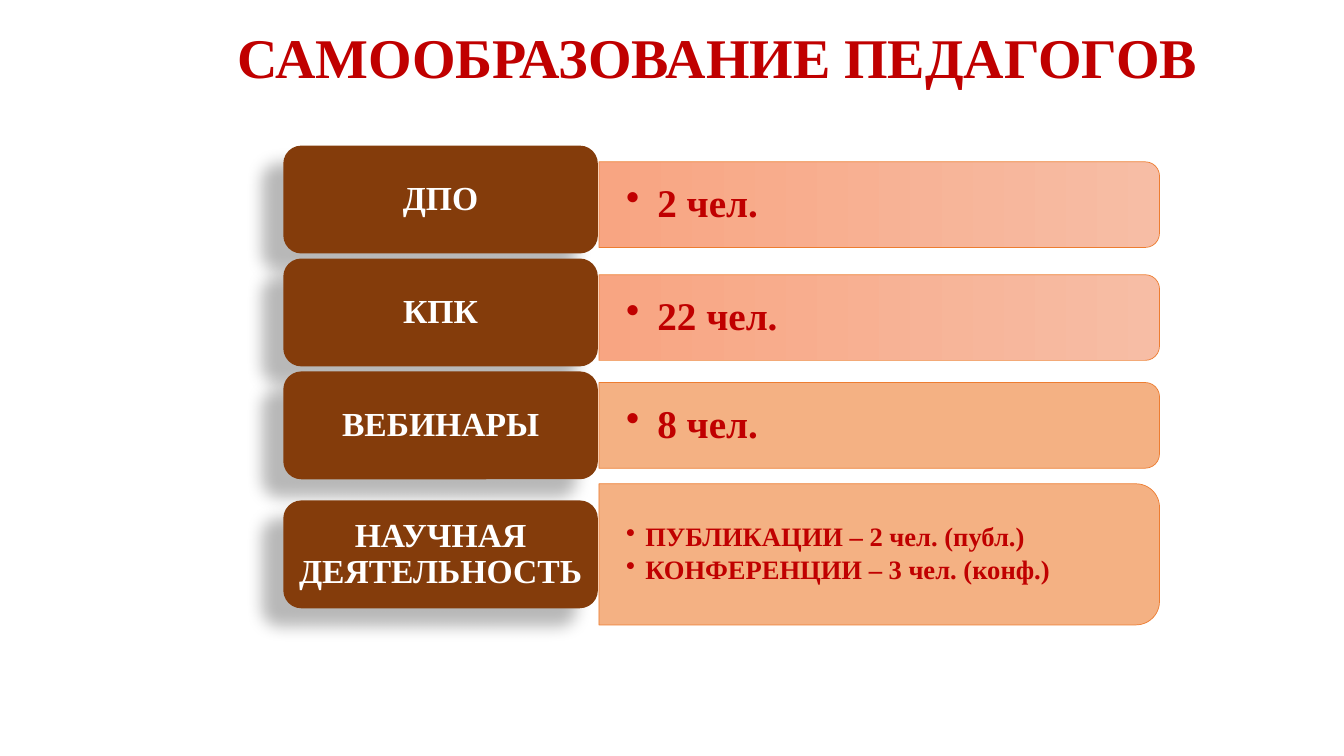
from lxml import etree
from pptx import Presentation
from pptx.dml.color import RGBColor
from pptx.enum.shapes import MSO_SHAPE
from pptx.enum.text import MSO_ANCHOR, PP_ALIGN
from pptx.oxml import parse_xml
from pptx.oxml.ns import nsdecls, qn
from pptx.util import Inches, Pt

ROUNDED = MSO_SHAPE.ROUNDED_RECTANGLE
ROUNDED_TOP = MSO_SHAPE.ROUND_2_SAME_RECTANGLE
MIDDLE = MSO_ANCHOR.MIDDLE
LEFT, CENTER = PP_ALIGN.LEFT, PP_ALIGN.CENTER

COLORS = {
    "red": "C00000",
    "brown": "843C0B",
    "white": "FFFFFF",
    "orange": "ED7D31",
    "peach": "F4B183",
    "light_salmon": "F7BDA5",
    "salmon": "F8A582",
}
FONT = "Times New Roman"
LABEL_LEFT, LABEL_WIDTH, LABEL_HEIGHT = 2.81, 3.12, 1.07
BAR_LEFT, BAR_WIDTH = 5.94, 5.56

# label, label centre, bar centre, bar height, gradient, text size, indent, bullets
ROWS = [
    ("ДПО", 1.98, 2.03, 0.85, True, 28, 0.31, ["2 чел."]),
    ("КПК", 3.1, 3.15, 0.85, True, 28, 0.31, ["22 чел."]),
    ("ВЕБИНАРЫ", 4.22, 4.22, 0.85, False, 28, 0.31, ["8 чел."]),
    ("НАУЧНАЯ ДЕЯТЕЛЬНОСТЬ", 5.5, 5.5, 1.4, False, 19, 0.19,
     ["ПУБЛИКАЦИИ – 2 чел. (публ.)", "КОНФЕРЕНЦИИ – 3 чел. (конф.)"]),
]


def rgb(name):
    return RGBColor.from_string(COLORS[name])


class SlideBuilder:
    def __init__(self, slide):
        self.slide = slide

    def format_paragraph(self, paragraph, size, color, alignment):
        paragraph.alignment = alignment
        paragraph.line_spacing = 0.9
        for run in paragraph.runs:
            run.font.name = FONT
            run.font.size = Pt(size)
            run.font.bold = True
            run.font.color.rgb = rgb(color)

    def set_frame(self, text_frame, horizontal, vertical):
        """Wrap the text, centre it vertically and set its insets."""
        text_frame.word_wrap = True
        text_frame.vertical_anchor = MIDDLE
        text_frame.margin_left = text_frame.margin_right = Inches(horizontal)
        text_frame.margin_top = text_frame.margin_bottom = Inches(vertical)

    def title(self, text):
        title = self.slide.shapes.title
        title.left, title.top = Inches(2.26), Inches(-0.13)
        title.width, title.height = Inches(11.5), Inches(1.45)
        self.set_frame(title.text_frame, 0.1, 0.05)
        title.text_frame.text = text
        self.format_paragraph(title.text_frame.paragraphs[0], 40, "red", LEFT)

    def bar(self, center, height, gradient):
        """Draw an upright shape turned by 90 degrees, rounded on the right."""
        left = BAR_LEFT + (BAR_WIDTH - height) / 2
        bar = self.slide.shapes.add_shape(
            ROUNDED_TOP, Inches(left), Inches(center - BAR_WIDTH / 2),
            Inches(height), Inches(BAR_WIDTH))
        bar.rotation = 90
        bar.shadow.inherit = False
        bar.line.color.rgb = rgb("orange")
        bar.line.width = Pt(0.5)
        if gradient:
            bar.fill.gradient()
            bar.fill.gradient_angle = 270
            for stop, color in zip(bar.fill.gradient_stops, ("light_salmon", "salmon")):
                stop.color.rgb = rgb(color)
        else:
            bar.fill.solid()
            bar.fill.fore_color.rgb = rgb("peach")

    def bullets(self, center, height, size, indent, lines):
        box = self.slide.shapes.add_textbox(
            Inches(BAR_LEFT), Inches(center - height / 2), Inches(5.51), Inches(height))
        self.set_frame(box.text_frame, 0.27, 0.14)
        box.text_frame.text = "\n".join(lines)
        for paragraph in box.text_frame.paragraphs:
            properties = paragraph._p.get_or_add_pPr()
            properties.set("marL", str(Inches(indent)))
            properties.set("indent", str(-Inches(indent)))
            etree.SubElement(properties, qn("a:buChar")).set("char", "•")
            paragraph.space_after = Pt(3)
            self.format_paragraph(paragraph, size, "red", LEFT)

    def label(self, text, center):
        label = self.slide.shapes.add_shape(
            ROUNDED, Inches(LABEL_LEFT), Inches(center - LABEL_HEIGHT / 2),
            Inches(LABEL_WIDTH), Inches(LABEL_HEIGHT))
        label.fill.solid()
        label.fill.fore_color.rgb = rgb("brown")
        label.line.fill.background()
        self.add_shadow(label)
        self.set_frame(label.text_frame, 0.05, 0.05)
        label.text_frame.text = text
        self.format_paragraph(label.text_frame.paragraphs[0], 24, "white", CENTER)

    def add_shadow(self, shape):
        """Cast a soft shadow to the lower left."""
        shape.shadow.inherit = False
        effects = shape._element.spPr.find(qn("a:effectLst"))
        effects.append(parse_xml(
            f'<a:outerShdw {nsdecls("a")} blurRad="{Pt(11.8)}" dist="{Pt(19.7)}" '
            f'dir="{141 * 60000}" rotWithShape="0"><a:srgbClr val="000000">'
            '<a:alpha val="28000"/></a:srgbClr></a:outerShdw>'))


def main():
    presentation = Presentation()
    presentation.slide_width, presentation.slide_height = Inches(13.33), Inches(7.5)
    title_only = presentation.slide_layouts[5]
    builder = SlideBuilder(presentation.slides.add_slide(title_only))
    builder.title("САМООБРАЗОВАНИЕ ПЕДАГОГОВ")
    for text, label_center, bar_center, height, gradient, size, indent, lines in ROWS:
        builder.bar(bar_center, height, gradient)
        builder.bullets(bar_center, height - 0.1, size, indent, lines)
        builder.label(text, label_center)
    presentation.save("out.pptx")


if __name__ == "__main__":
    main()
